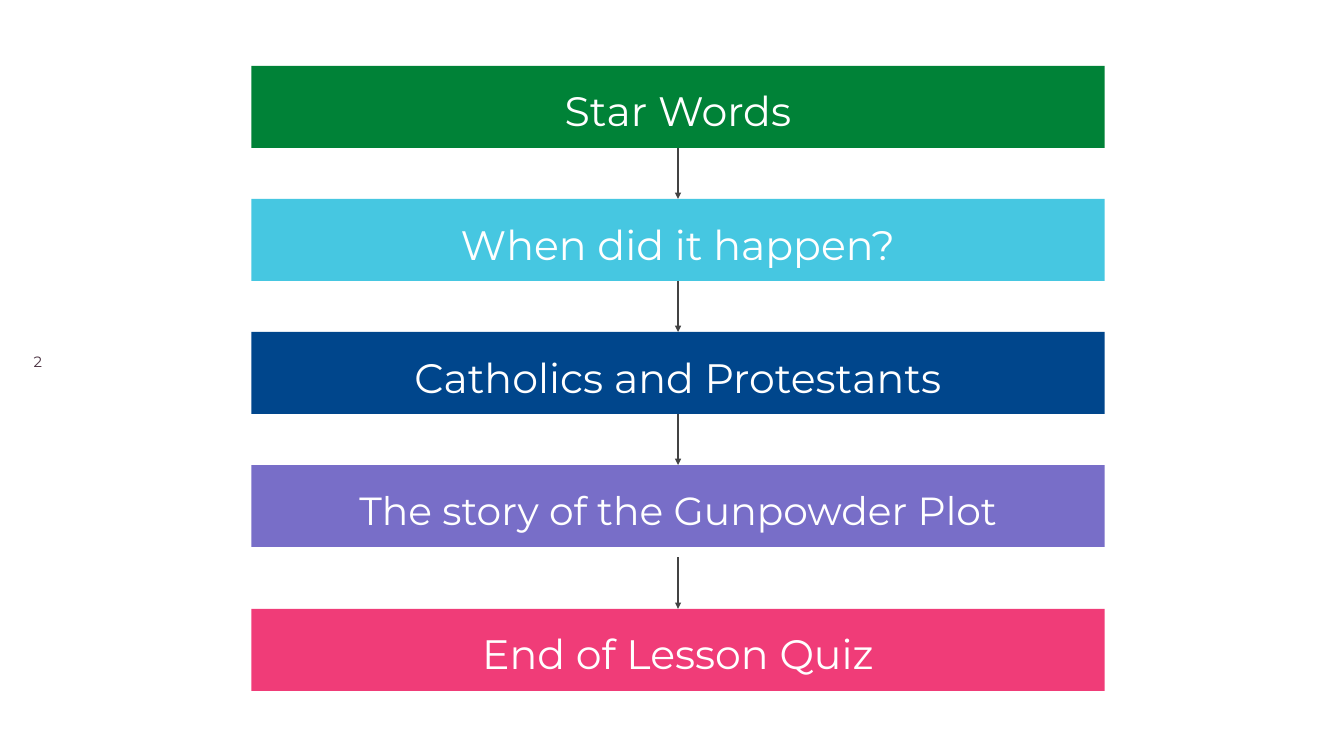
from pptx import Presentation
from pptx.dml.color import RGBColor
from pptx.enum.shapes import MSO_CONNECTOR as CONN, MSO_SHAPE as SHAPE
from pptx.enum.text import MSO_ANCHOR as ANCHOR, PP_ALIGN as ALIGN
from pptx.oxml.ns import qn
from pptx.util import Inches, Pt
from lxml.etree import SubElement

WHITE = RGBColor(0xFF, 0xFF, 0xFF)
GREEN = RGBColor(0x00, 0x82, 0x37)
CYAN = RGBColor(0x46, 0xC7, 0xE1)
NAVY = RGBColor(0x00, 0x46, 0x8C)
PURPLE = RGBColor(0x78, 0x6E, 0xC8)
PINK = RGBColor(0xF0, 0x3C, 0x78)
GREY = RGBColor(0x43, 0x43, 0x43)
PLUM = RGBColor(0x4B, 0x32, 0x41)

COLS, ROWS = 200, 112.5
LEFT, WIDTH, HEIGHT = 37.4, 127, 12.2
TOP, PITCH, LAST_TOP = 9.8, 19.8, 90.6
LAST_ARROW_TOP = 82.9

STEPS = [
    ("Star Words", GREEN, 44),
    ("When did it happen?", CYAN, 44),
    ("Catholics and Protestants", NAVY, 44),
    ("The story of the Gunpowder Plot", PURPLE, 42),
    ("End of Lesson Quiz", PINK, 44),
]


class LessonSlide:
    font = "Montserrat"

    def __init__(self, prs):
        self.s = prs.slides.add_slide(prs.slide_layouts[6])
        self.col = prs.slide_width / COLS
        self.row = prs.slide_height / ROWS

    def place(self, x, y):
        return round(x * self.col), round(y * self.row)

    def set_text(self, sp, text, size, color, inset, anchor):
        tf = sp.text_frame
        tf.word_wrap = True
        tf.vertical_anchor = anchor
        tf.margin_left = tf.margin_right = Inches(inset)
        tf.margin_top = tf.margin_bottom = Inches(inset)
        p = tf.paragraphs[0]
        p.text = text
        p.font.name = self.font
        p.font.size = Pt(size)
        p.font.color.rgb = color
        return p

    def step(self, text, fill, size, y):
        sp = self.s.shapes.add_shape(
            SHAPE.RECTANGLE, *self.place(LEFT, y), *self.place(WIDTH, HEIGHT))
        sp.shadow.inherit = False
        sp.fill.solid()
        sp.fill.fore_color.rgb = fill
        sp.line.fill.background()
        p = self.set_text(sp, text, size, WHITE, 0.2, ANCHOR.MIDDLE)
        p.alignment = ALIGN.CENTER
        p.line_spacing = 1.15
        return sp

    def arrow(self, target, start_y=0, source=None):
        x, y = self.place(LEFT + WIDTH / 2, start_y)
        line = self.s.shapes.add_connector(CONN.STRAIGHT, x, y, x, target.top)
        if source is not None:
            line.begin_connect(source, 2)
        line.end_connect(target, 0)
        line.line.color.rgb = GREY
        line.line.width = Pt(2.25)
        props = line._element.spPr
        SubElement(props.find(qn("a:ln")), qn("a:tailEnd"), type="triangle")
        SubElement(props, qn("a:effectLst"))

    def page_number(self, text):
        sp = self.s.shapes.add_textbox(*self.place(5, 52.4), *self.place(7.9, 2))
        self.set_text(sp, text, 16, PLUM, 0, ANCHOR.TOP)


def main():
    prs = Presentation()
    prs.slide_width, prs.slide_height = Inches(20), Inches(11.25)
    slide = LessonSlide(prs)

    tops = [TOP + i * PITCH for i in range(len(STEPS) - 1)] + [LAST_TOP]
    boxes = [slide.step(*step, y) for step, y in zip(STEPS, tops)]
    for source, target in zip(boxes[:-2], boxes[1:-1]):
        slide.arrow(target, source=source)
    slide.arrow(boxes[-1], start_y=LAST_ARROW_TOP)
    slide.page_number("2")

    prs.save("out.pptx")


if __name__ == "__main__":
    main()
